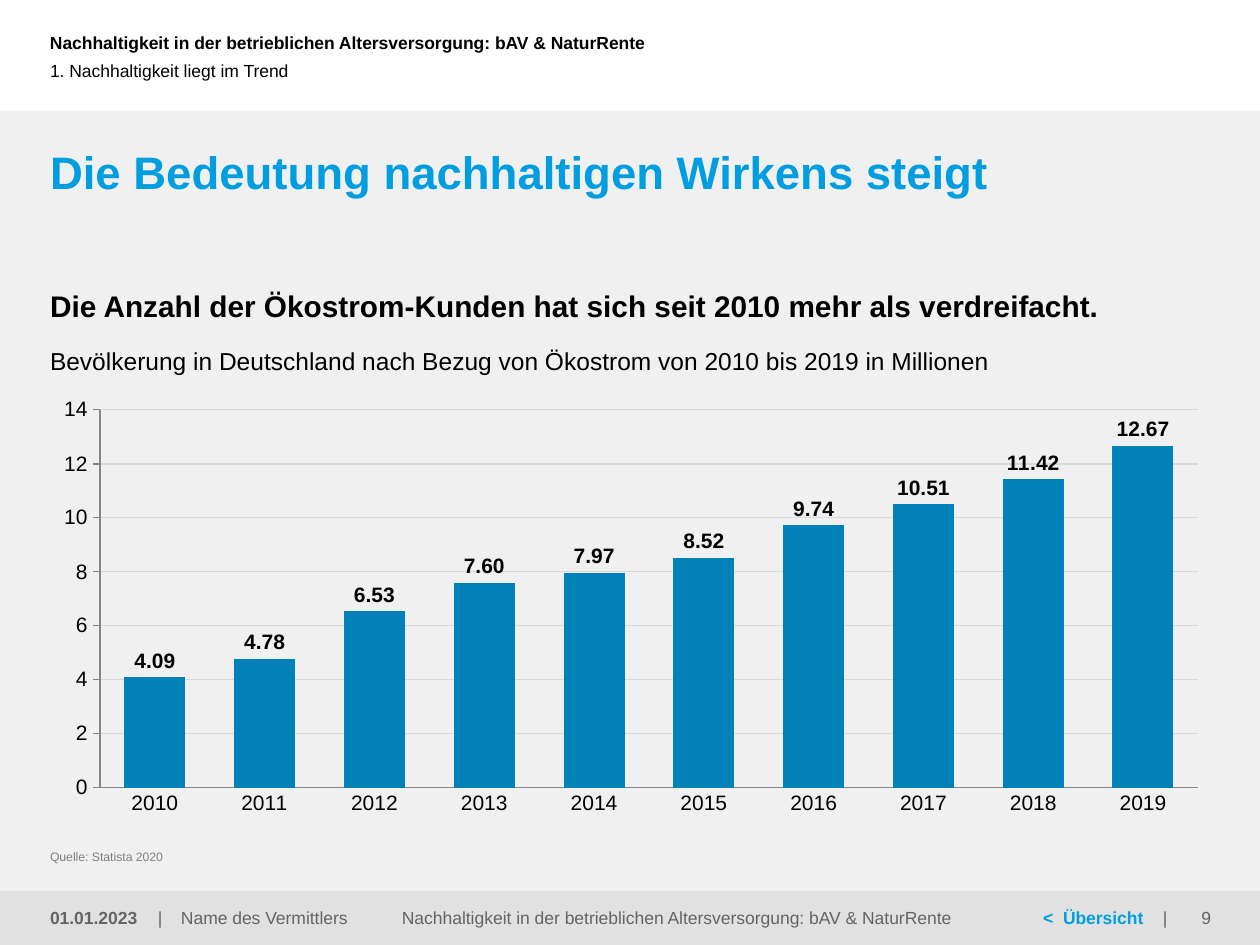
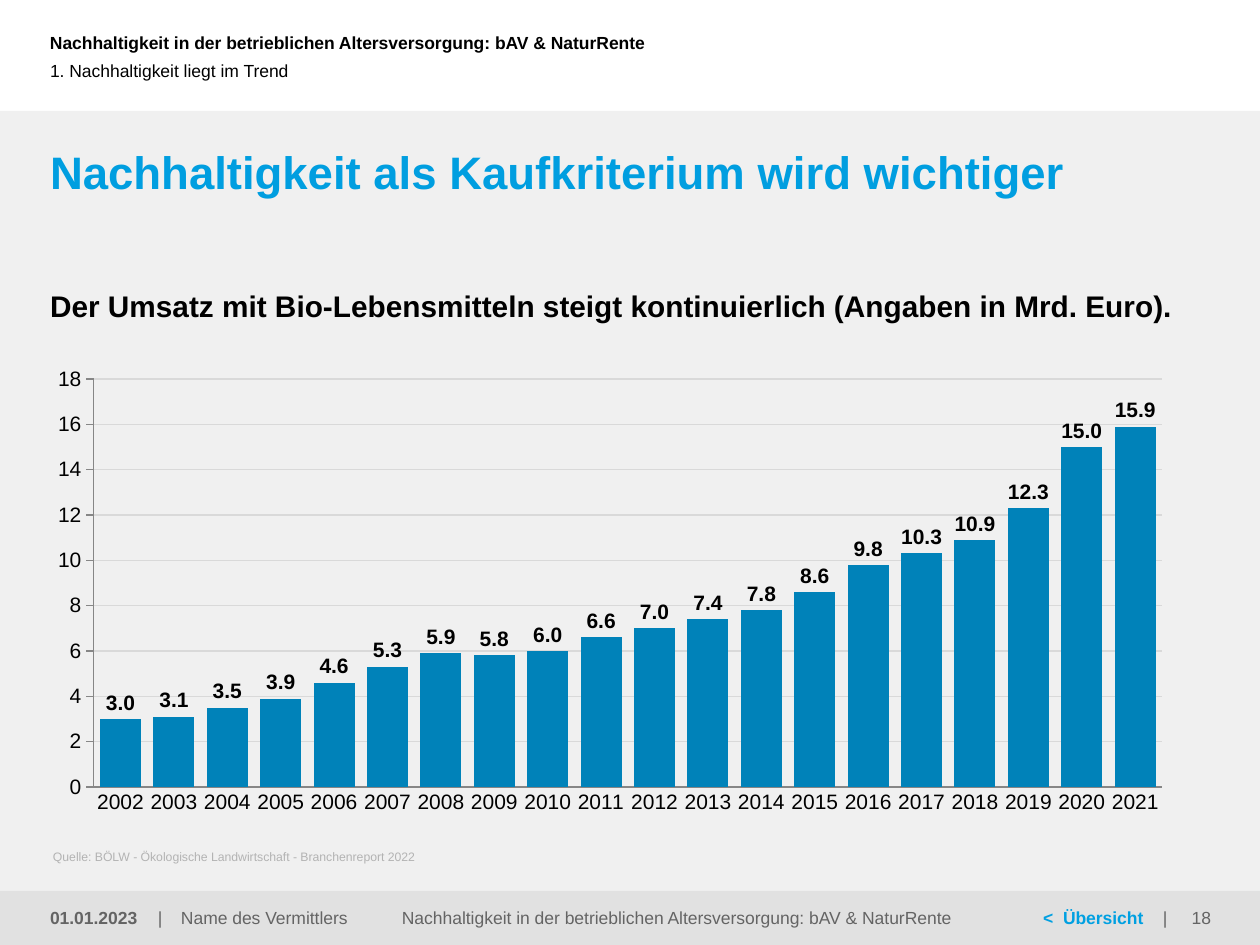
from lxml.etree import SubElement
from pptx import Presentation
from pptx.chart.data import CategoryChartData
from pptx.dml.color import RGBColor
from pptx.enum.chart import XL_CHART_TYPE, XL_LABEL_POSITION, XL_TICK_MARK
from pptx.enum.shapes import MSO_SHAPE
from pptx.enum.text import MSO_ANCHOR, MSO_AUTO_SIZE, PP_ALIGN
from pptx.oxml import parse_xml
from pptx.oxml.ns import nsdecls, qn
from pptx.util import Pt

FONT = "Arial"
COLORS = {
    "title": "009EE0", "link": "00A0E1", "bar": "0082B9", "text": "000000",
    "footer": "646464", "panel": "F0F0F0", "footer_band": "E1E1E1",
    "grid": "D9D9D9", "axis": "868686", "source": "808080", "pale_source": "B3B3B3",
}
PRESENTATION_NAME = "Nachhaltigkeit in der betrieblichen Altersversorgung: bAV & NaturRente"
CHAPTER = "1. Nachhaltigkeit liegt im Trend"
FOOTER_TOP, FOOTER_HEIGHT = 890, 54
BANDS = [("panel", (0, 111, 1260, 834)),
         ("footer_band", (0, 891, 1260, 54))]
FOOTER = [
    ("01.01.2023", 50, 105, True, "footer", PP_ALIGN.LEFT),
    ("|", 158, 15, False, "footer", PP_ALIGN.LEFT),
    ("Name des Vermittlers", 181, 190, False, "footer", PP_ALIGN.LEFT),
    (PRESENTATION_NAME, 374, 605, False, "footer", PP_ALIGN.CENTER),
    ("<", 1043, 18, True, "link", PP_ALIGN.LEFT),
    ("Übersicht", 1063, 95, True, "link", PP_ALIGN.LEFT),
    ("|", 1163, 15, False, "footer", PP_ALIGN.LEFT),
]
SLIDES = [
    {
        "number": 9,
        "title": "Die Bedeutung nachhaltigen Wirkens steigt",
        "headline": "Die Anzahl der Ökostrom-Kunden hat sich seit 2010 mehr als verdreifacht.",
        "subline": "Bevölkerung in Deutschland nach Bezug von Ökostrom von 2010 bis 2019 in Millionen",
        "source": ("Quelle: Statista 2020", 50, "source"),
        "first_year": 2010,
        "values": [4.09, 4.78, 6.53, 7.6, 7.97, 8.52, 9.74, 10.51, 11.42, 12.67],
        "label_format": "0.00", "maximum": 14, "gap": 80,
        "chart_box": (58, 398, 1142, 417), "plot_box": (100, 410, 1098, 380),
    },
    {
        "number": 18,
        "title": "Nachhaltigkeit als Kaufkriterium wird wichtiger",
        "headline": "Der Umsatz mit Bio-Lebensmitteln steigt kontinuierlich (Angaben in Mrd. Euro).",
        "subline": None,
        "source": ("Quelle: BÖLW - Ökologische Landwirtschaft - Branchenreport 2022",
                   53, "pale_source"),
        "first_year": 2002,
        "values": [3, 3.1, 3.5, 3.9, 4.6, 5.3, 5.9, 5.8, 6, 6.6,
                   7, 7.4, 7.8, 8.6, 9.8, 10.3, 10.9, 12.3, 15, 15.9],
        "label_format": "#,##0.0", "maximum": 18, "gap": 30,
        "chart_box": (58, 368, 1113, 446), "plot_box": (93, 379, 1069, 412),
    },
]


def px(length):
    """Convert px to EMU."""
    return round(length * 914400 / 126)


def color(name):
    """Look up a colour by its role."""
    return RGBColor.from_string(COLORS[name])


def format_font(font, size, bold, color_name):
    """Apply the deck's font."""
    font.name, font.size, font.bold = FONT, Pt(size), bold
    font.color.rgb = color(color_name)


def write(shape, box, text, size, bold=False, color_name="text",
          align=PP_ALIGN.LEFT, anchor=MSO_ANCHOR.MIDDLE):
    """Place a text holder and fill it with one formatted paragraph."""
    shape.left, shape.top, shape.width, shape.height = map(px, box)
    frame = shape.text_frame
    frame.auto_size, frame.word_wrap = MSO_AUTO_SIZE.NONE, True
    frame.vertical_anchor = anchor
    frame.margin_left = frame.margin_top = frame.margin_right = frame.margin_bottom = 0
    paragraph = frame.paragraphs[0]
    paragraph.text = text
    paragraph.alignment = align
    paragraph.space_before = Pt(0)
    properties = paragraph._p.get_or_add_pPr()
    properties.set("marL", "0")
    properties.set("indent", "0")
    SubElement(properties, qn("a:buNone"))
    format_font(paragraph.font, size, bold, color_name)


def add_frame(slide, number):
    """Add the bands, the header and the footer that all slides share."""
    shapes = slide.shapes
    for depth, (color_name, box) in enumerate(BANDS, start=2):
        band = shapes.add_shape(MSO_SHAPE.RECTANGLE, *map(px, box))
        band.shadow.inherit = False
        band.fill.solid()
        band.fill.fore_color.rgb = color(color_name)
        band.line.fill.background()
        shapes.element.insert(depth, band.element)
    header = shapes.add_textbox(0, 0, 0, 0)
    write(header, (50, 0, 818, 85), PRESENTATION_NAME, 10, bold=True)
    page = (str(number), 1180, 31, False, "footer", PP_ALIGN.RIGHT)
    for text, left, width, bold, color_name, align in FOOTER + [page]:
        entry = shapes.add_textbox(0, 0, 0, 0)
        write(entry, (left, FOOTER_TOP, width, FOOTER_HEIGHT), text, 10, bold, color_name, align)


def set_plot_box(chart, chart_box, plot_box):
    """Fix the inner plot area inside the chart."""
    left, top, width, height = chart_box
    fractions = {
        "x": (plot_box[0] - left) / width, "y": (plot_box[1] - top) / height,
        "w": plot_box[2] / width, "h": plot_box[3] / height,
    }
    plot_area = chart.element.xpath(".//c:plotArea")[0]
    for layout in plot_area.findall(qn("c:layout")):
        plot_area.remove(layout)
    places = "".join(f'<c:{key} val="{value:.4f}"/>' for key, value in fractions.items())
    plot_area.insert(0, parse_xml(
        f'<c:layout {nsdecls("c")}><c:manualLayout><c:layoutTarget val="inner"/>'
        f'<c:xMode val="edge"/><c:yMode val="edge"/>{places}</c:manualLayout></c:layout>'))


def add_yearly_chart(slide, content):
    """Add the column chart with one bar for each year."""
    data = CategoryChartData()
    first = content["first_year"]
    data.categories = [str(first + step) for step in range(len(content["values"]))]
    data.add_series("Series 1", content["values"])
    chart = slide.shapes.add_chart(
        XL_CHART_TYPE.COLUMN_CLUSTERED, *map(px, content["chart_box"]), data).chart
    chart.has_title = chart.has_legend = False
    format_font(chart.font, 12, False, "text")
    set_plot_box(chart, content["chart_box"], content["plot_box"])

    years, amounts = chart.category_axis, chart.value_axis
    for axis in (years, amounts):
        axis.format.line.color.rgb = color("axis")
        axis.format.line.width = Pt(0.75)
    years.major_tick_mark = XL_TICK_MARK.NONE
    amounts.major_tick_mark = XL_TICK_MARK.OUTSIDE
    amounts.minimum_scale, amounts.maximum_scale = 0, content["maximum"]
    amounts.major_unit = 2
    amounts.tick_labels.number_format = "#,##0"
    amounts.tick_labels.number_format_is_linked = False
    amounts.major_gridlines.format.line.color.rgb = color("grid")
    amounts.major_gridlines.format.line.width = Pt(0.75)

    plot = chart.plots[0]
    plot.gap_width, plot.vary_by_categories = content["gap"], False
    bars = plot.series[0]
    bars.format.fill.solid()
    bars.format.fill.fore_color.rgb = color("bar")
    plot.has_data_labels = True
    labels = plot.data_labels
    labels.show_value = True
    labels.position = XL_LABEL_POSITION.OUTSIDE_END
    labels.number_format = content["label_format"]
    labels.number_format_is_linked = False
    format_font(labels.font, 12, True, "text")


def add_content_slide(presentation, content):
    """Build one slide from its content."""
    slide = presentation.slides.add_slide(presentation.slide_layouts.get_by_name("Comparison"))
    title, headline, subline, chapter, source = slide.placeholders
    top = MSO_ANCHOR.TOP
    write(title, (50, 144, 1162, 69), content["title"], 26, True, "title", anchor=top)
    write(headline, (50, 288, 1162, 37), content["headline"], 17, True, anchor=top)
    if content["subline"]:
        write(subline, (50, 346, 1162, 40), content["subline"], 14, anchor=top)
    else:
        subline.element.getparent().remove(subline.element)
    write(chapter, (50, 31, 852, 80), CHAPTER, 10)
    text, left, color_name = content["source"]
    write(source, (left, 849, 1160, 15), text, 7, False, color_name, anchor=MSO_ANCHOR.BOTTOM)
    add_frame(slide, content["number"])
    add_yearly_chart(slide, content)


def main():
    """Build and save the presentation."""
    presentation = Presentation()
    presentation.slide_width, presentation.slide_height = px(1260), px(945)
    for content in SLIDES:
        add_content_slide(presentation, content)
    presentation.save("out.pptx")


if __name__ == "__main__":
    main()
